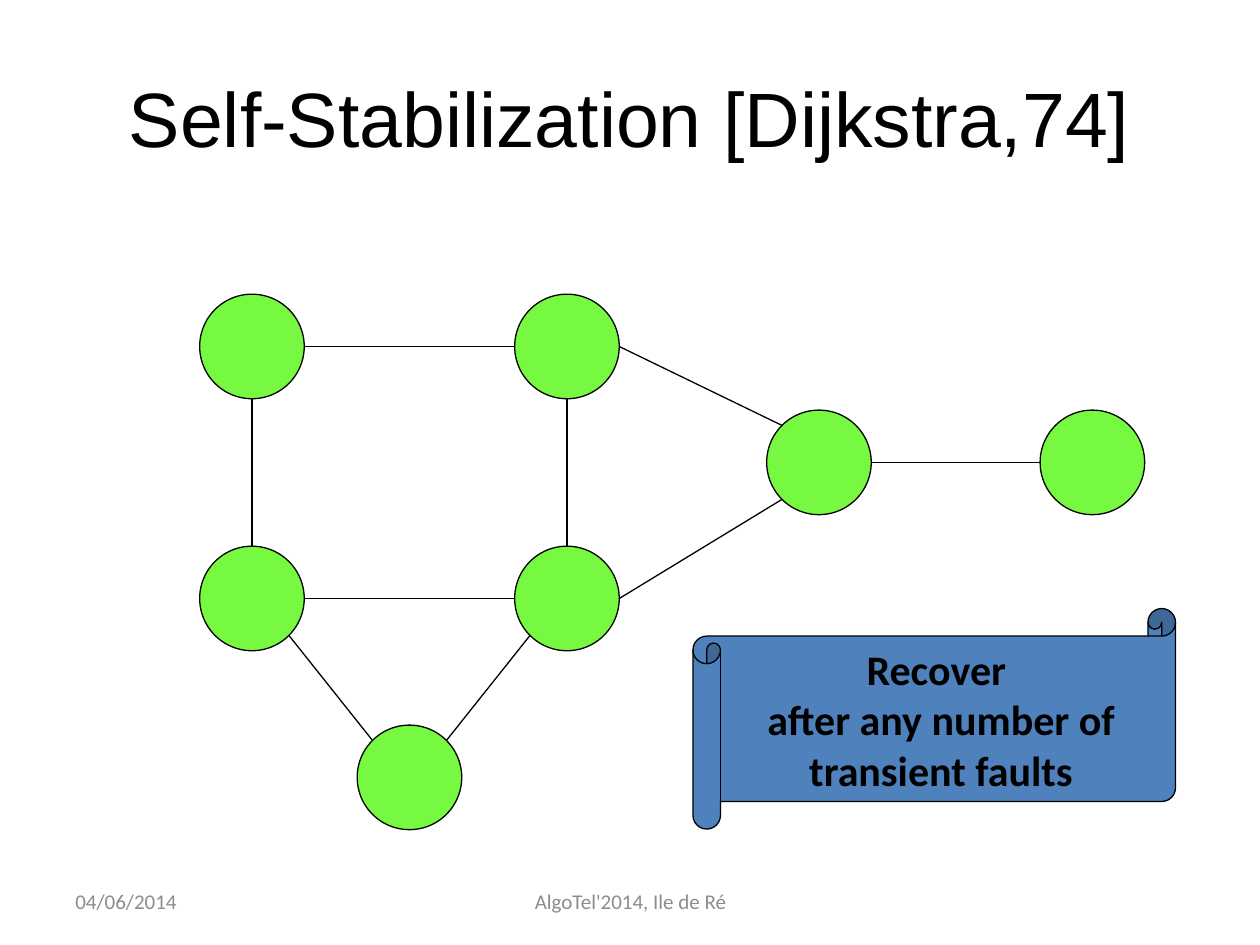
from math import sqrt

from lxml import etree
from pptx import Presentation
from pptx.dml.color import RGBColor
from pptx.enum import shapes, text
from pptx.oxml.ns import qn
from pptx.util import Inches, Pt

# Content
TITLE = "Self-Stabilization [Dijkstra,74]"
SCROLL_LINES = ["Recover ", "after any number of transient faults"]
FOOTERS = [  # text, left, width, alignment
    ("04/06/2014", 0.5, 2.33, text.PP_ALIGN.LEFT),
    ("AlgoTel'2014, Ile de Ré", 3.42, 3.17, text.PP_ALIGN.CENTER),
]
NODES = {  # centre of each process
    "top left": (2, 2.75),
    "top right": (4.5, 2.75),
    "low left": (2, 4.75),
    "low right": (4.5, 4.75),
    "bottom": (3.25, 6.17),
    "hub": (6.5, 3.67),
    "leaf": (8.67, 3.67),
}
LINKS = [  # node, compass side, node, compass side
    ("top left", "S", "low left", "N"),
    ("top left", "E", "top right", "W"),
    ("top right", "S", "low right", "N"),
    ("low right", "W", "low left", "E"),
    ("top right", "E", "hub", "NW"),
    ("hub", "SW", "low right", "E"),
    ("leaf", "W", "hub", "E"),
    ("low left", "SE", "bottom", "NW"),
    ("low right", "SW", "bottom", "NE"),
]
DIAMETER = 0.83
THEME = {
    "black": RGBColor.from_string("000000"),
    "node": RGBColor.from_string("76F940"),
    "scroll": RGBColor.from_string("4F81BD"),
    "grey": RGBColor.from_string("8C8C8C"),
    "title font": "Arial", "body font": "Calibri",
    "title size": 44, "scroll size": 24, "footer size": 12,
    "line width": 0.75,
}


def write(frame, lines, role, font, color, align, bold=False):
    frame.word_wrap = True
    frame.vertical_anchor = text.MSO_ANCHOR.MIDDLE
    for index, line in enumerate(lines):
        para = frame.add_paragraph() if index else frame.paragraphs[0]
        para.alignment = align
        span = para.add_run()
        span.text = line
        span.font.name = THEME[font]
        span.font.size = Pt(THEME[role])
        span.font.color.rgb = THEME[color]
        span.font.bold = bold


def outline(line):
    line.color.rgb = THEME["black"]
    line.width = Pt(THEME["line width"])


def add_solid(page, kind, left, top, width, height, color):
    shape = page.shapes.add_shape(
        kind, Inches(left), Inches(top), Inches(width), Inches(height))
    shape.shadow.inherit = False
    shape.fill.solid()
    shape.fill.fore_color.rgb = THEME[color]
    outline(shape.line)
    return shape


def rim_point(node, side):
    """Point on the node's circle in a compass direction."""
    x, y = NODES[node]
    across = ("E" in side) - ("W" in side)
    down = ("S" in side) - ("N" in side)
    reach = DIAMETER / 2 / sqrt(len(side))
    return Inches(x + across * reach), Inches(y + down * reach)


def main():
    deck = Presentation()
    deck.slide_width, deck.slide_height = Inches(10), Inches(7.5)
    page = deck.slides.add_slide(deck.slide_layouts[5])

    # Title
    title = page.shapes.title
    title.left, title.top = Inches(0.5), Inches(0.3)
    title.width, title.height = Inches(9), Inches(1.25)
    write(title.text_frame, [TITLE], "title size", "title font", "black",
          text.PP_ALIGN.CENTER)

    # Network nodes
    for x, y in NODES.values():
        add_solid(page, shapes.MSO_SHAPE.OVAL, x - DIAMETER / 2,
                  y - DIAMETER / 2, DIAMETER, DIAMETER, "node")

    # Network links
    for start, start_side, end, end_side in LINKS:
        link = page.shapes.add_connector(
            shapes.MSO_CONNECTOR.STRAIGHT,
            *rim_point(start, start_side), *rim_point(end, end_side))
        outline(link.line)
        etree.SubElement(link._element.spPr, qn("a:effectLst"))

    # Scroll
    scroll = add_solid(page, shapes.MSO_SHAPE.HORIZONTAL_SCROLL,
                       5.5, 4.83, 3.83, 1.75, "scroll")
    scroll.adjustments[0] = 0.125
    write(scroll.text_frame, SCROLL_LINES, "scroll size", "body font", "black",
          text.PP_ALIGN.CENTER, bold=True)

    # Footer
    for label, left, width, align in FOOTERS:
        box = page.shapes.add_textbox(
            Inches(left), Inches(6.95), Inches(width), Inches(0.4))
        write(box.text_frame, [label], "footer size", "body font", "grey", align)

    deck.save("out.pptx")


if __name__ == "__main__":
    main()
